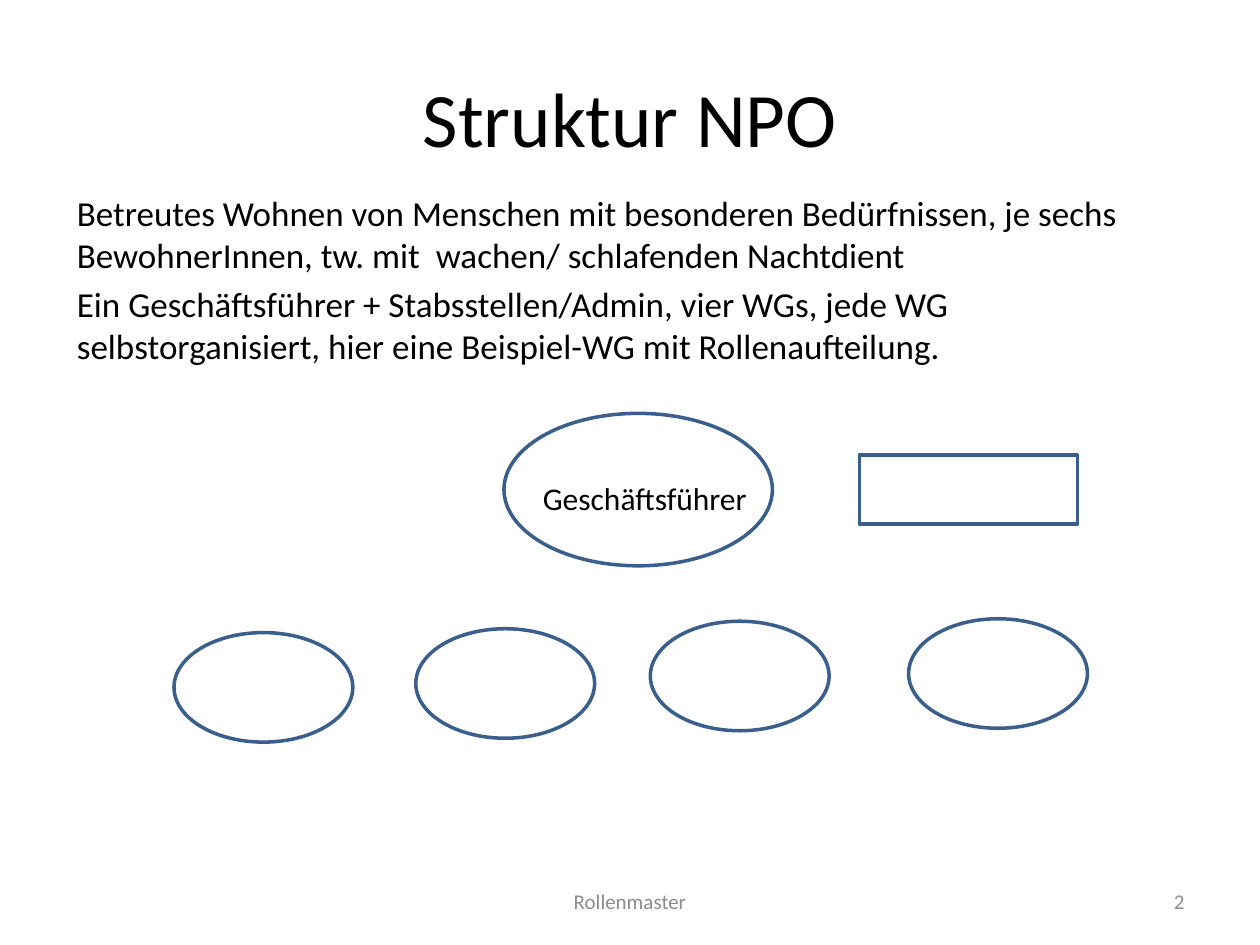
from pptx import Presentation
from pptx.dml.color import RGBColor
from pptx.enum.shapes import MSO_SHAPE as Shape
from pptx.enum.text import MSO_ANCHOR as Anchor, MSO_AUTO_SIZE as AutoSize, PP_ALIGN as Align
from pptx.util import Pt
from lxml.etree import SubElement
from pptx.oxml.ns import qn

COLORS = {"text": "000000", "footer": "8C8C8C", "fill": "FFFFFF", "line": "3A5F8C"}
FONT = "Calibri"


def color(name):
    """Return the named palette colour."""
    return RGBColor.from_string(COLORS[name])


def place(shape, box):
    """Move and size a shape to a box of left, top, width, height."""
    shape.left, shape.top, shape.width, shape.height = (Pt(length) for length in box)


def format_paragraph(paragraph, size, color_name="text", align=Align.LEFT):
    """Set the font and alignment of a paragraph."""
    paragraph.alignment = align
    paragraph.font.name = FONT
    paragraph.font.size = Pt(size)
    paragraph.font.color.rgb = color(color_name)


def add_title(slide, box, text):
    """Fill the title placeholder."""
    title = slide.shapes.title
    place(title, box)
    title.text_frame.text = text
    title.text_frame.vertical_anchor = Anchor.MIDDLE
    format_paragraph(title.text_frame.paragraphs[0], 44, align=Align.CENTER)


def add_body(slide, box, texts):
    """Fill the body placeholder with paragraphs that have no bullets."""
    body = slide.placeholders[1]
    place(body, box)
    frame = body.text_frame
    frame.text = "\n".join(texts)
    frame.auto_size = AutoSize.NONE
    for paragraph in frame.paragraphs:
        format_paragraph(paragraph, 20)
        paragraph.space_before = Pt(4)
        properties = paragraph._p.get_or_add_pPr()
        properties.set("marL", "0")
        properties.set("indent", "0")
        bullet = SubElement(properties, qn("a:buNone"))
        properties.find(qn("a:defRPr")).addprevious(bullet)


def add_label(slide, box, text, size, color_name="text", align=Align.LEFT, anchor=Anchor.TOP):
    """Add a one-line text box."""
    label = slide.shapes.add_textbox(*(Pt(length) for length in box))
    frame = label.text_frame
    frame.word_wrap = True
    frame.vertical_anchor = anchor
    frame.text = text
    format_paragraph(frame.paragraphs[0], size, color_name, align)


def add_node(slide, kind, box):
    """Add an outlined node of the organisation chart."""
    node = slide.shapes.add_shape(kind, *(Pt(length) for length in box))
    node.shadow.inherit = False
    node.fill.solid()
    node.fill.fore_color.rgb = color("fill")
    node.line.color.rgb = color("line")
    node.line.width = Pt(2)


def add_organisation(slide, box):
    """Draw the manager, the staff unit and the four shared flats."""
    left, top, width, height = box
    add_node(slide, Shape.OVAL, (left + 188.6, top, 153.4, 87.1))
    flat_width, flat_height = 102.2, 62.6
    for x, y in ((0, 125.3), (138.2, 123.1), (272.2, 118.8), (width - flat_width, 117.4)):
        add_node(slide, Shape.OVAL, (left + x, top + y, flat_width, flat_height))
    add_node(slide, Shape.RECTANGLE, (left + 391.7, top + 23.8, 124.6, 39.6))
    add_label(slide, (left + 203.7, top + 33.8, 138.3, 28.8), "Geschäftsführer", 18)


def add_footer(slide, box, text, number):
    """Add the centred footer text and the slide number at the right."""
    left, top, width, height = box
    text_width, number_width = 228, 168
    add_label(slide, (left + (width - text_width) / 2, top, text_width, height), text, 12,
              "footer", Align.CENTER, Anchor.MIDDLE)
    add_label(slide, (left + width - number_width, top, number_width, height), number, 12,
              "footer", Align.RIGHT, Anchor.MIDDLE)


def main():
    """Build and save the slide."""
    presentation = Presentation()
    presentation.slide_width, presentation.slide_height = Pt(720), Pt(540)
    slide = presentation.slides.add_slide(presentation.slide_layouts[1])
    add_title(slide, (36, 21.6, 648, 90), "Struktur NPO")
    add_body(slide, (36.7, 105.8, 648, 105.8), (
        "Betreutes Wohnen von Menschen mit besonderen Bedürfnissen, je sechs "
        "BewohnerInnen, tw. mit  wachen/ schlafenden Nachtdient",
        "Ein Geschäftsführer + Stabsstellen/Admin, vier WGs, jede WG "
        "selbstorganisiert, hier eine Beispiel-WG mit Rollenaufteilung.",
    ))
    add_organisation(slide, (99.4, 236.2, 522, 187.9))
    add_footer(slide, (36, 500.5, 648, 28.75), "Rollenmaster", "2")
    presentation.save("out.pptx")


if __name__ == "__main__":
    main()
